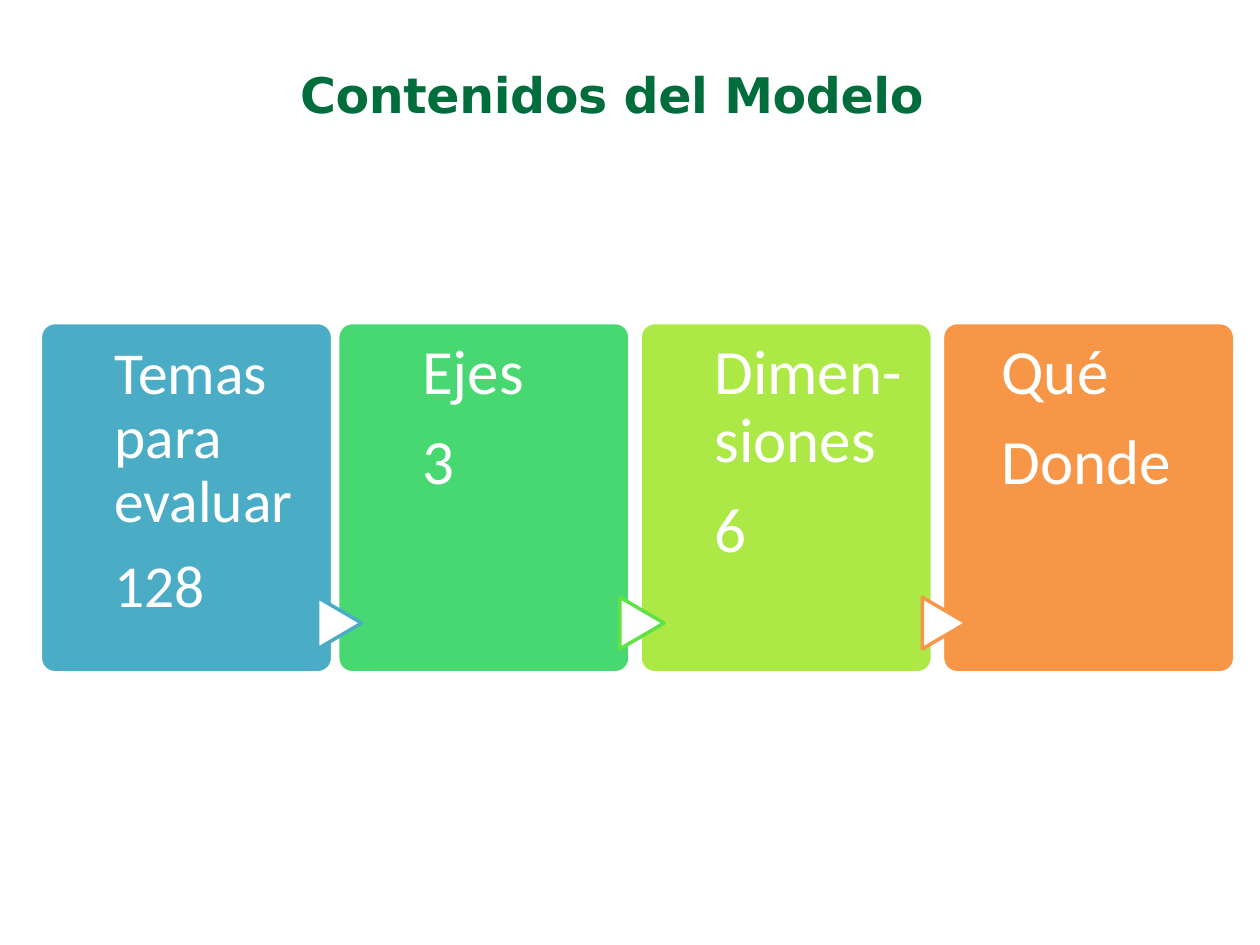
from pptx import Presentation
from pptx import util as u
from pptx.dml.color import RGBColor
from pptx.enum import shapes, text


def rgb(c):
    return RGBColor.from_string(c)


def add_block(s, kind, left, top, width, height, fill, line):
    sp = s.shapes.add_shape(kind, u.Inches(left), u.Inches(top), u.Inches(width), u.Inches(height))
    sp.shadow.inherit = False
    sp.fill.solid()
    sp.fill.fore_color.rgb = rgb(fill)
    sp.line.color.rgb = rgb(line)
    sp.line.width = u.Pt(2)
    return sp


prs = Presentation()
prs.slide_width, prs.slide_height = u.Inches(10), u.Inches(7.5)
s = prs.slides.add_slide(prs.slide_layouts[5])

title = s.shapes.title
title.left, title.top = u.Inches(2.17), u.Inches(0.44)
title.width, title.height = u.Inches(5.37), u.Inches(0.69)
tf = title.text_frame
tf.text = "Contenidos del Modelo"
tf.vertical_anchor = text.MSO_ANCHOR.TOP
tf.margin_top = u.Inches(0.07)
p = tf.paragraphs[0]
p.alignment = text.PP_ALIGN.CENTER
r = p.runs[0]
r.font.size, r.font.bold, r.font.name = u.Pt(28), True, "DejaVu Sans"
r.font.color.rgb = rgb("006D3C")
r._r.get_or_add_rPr().set("spc", "-20")

top, width, height, pitch = 2.56, 2.32, 2.78, 2.4
cards = [
    (0.32, "4BACC6", None, 34, 0.12, 0.16, ["Temas para evaluar", "128"]),
    (0.28 + pitch, "47D872", "4BACC6", 36, 0.2, 0.14, ["Ejes", "3"]),
    (0.28 + 2 * pitch, "ACE946", "60E146", 36, 0.12, 0.14, ["Dimen- siones", "6"]),
    (0.28 + 3 * pitch, "F79646", "F79646", 36, 0, 0.14, ["Qué", "Donde"]),
]

for left, fill, arrow_line, size, inset_left, inset_top, lines in cards:
    card = add_block(s, shapes.MSO_SHAPE.ROUNDED_RECTANGLE, left, top, width, height, fill, "FFFFFF")
    card.adjustments[0] = 0.05
    if arrow_line:
        arrow = add_block(s, shapes.MSO_SHAPE.FLOWCHART_EXTRACT, left - 0.19, 4.77, 0.41, 0.35,
                          "FFFFFF", arrow_line)
        arrow.rotation = 90
    tb = s.shapes.add_textbox(u.Inches(left + 0.47), u.Inches(top), u.Inches(1.73), u.Inches(height))
    tf = tb.text_frame
    tf.word_wrap = True
    tf.margin_left, tf.margin_top = u.Inches(inset_left), u.Inches(inset_top)
    tf.margin_right = tf.margin_bottom = 0
    tf.text = "\n".join(lines)
    for p in tf.paragraphs:
        p.line_spacing = 0.9
        p.space_after = u.Pt(0.35 * size)
        r = p.runs[0]
        r.font.size, r.font.name = u.Pt(size), "Calibri"
        r.font.color.rgb = rgb("FFFFFF")

prs.save("out.pptx")
